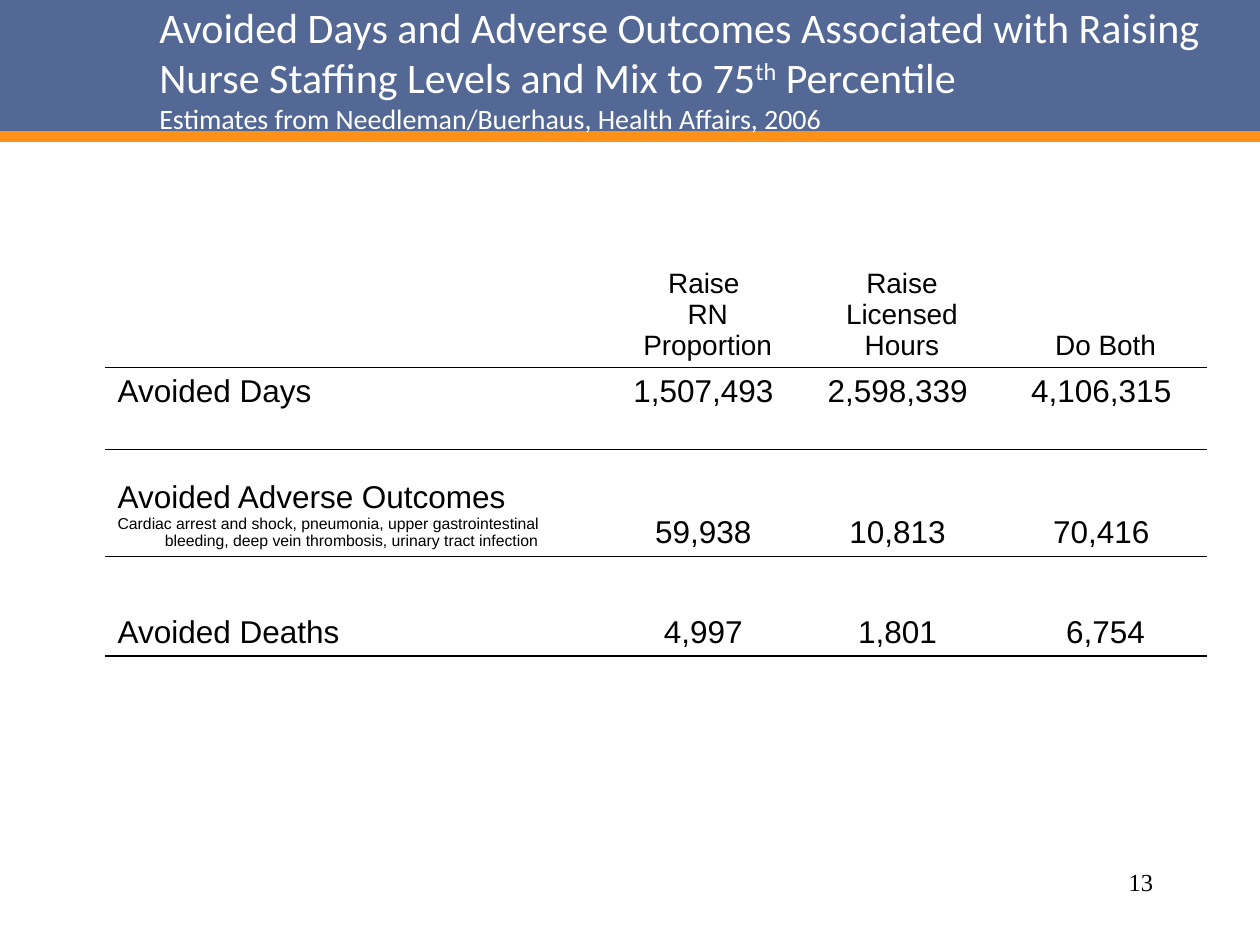
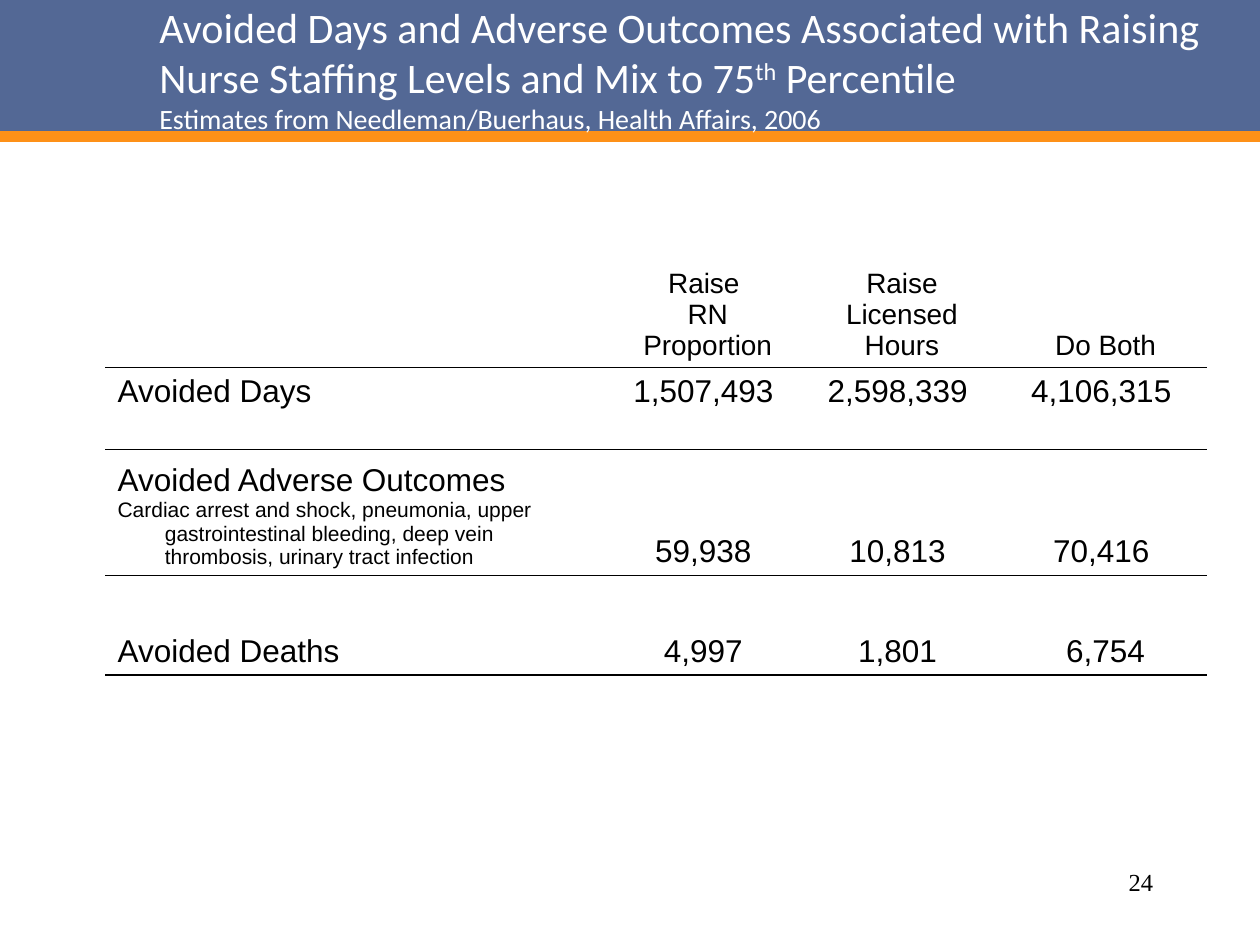
"""Build two slides on days and outcomes avoided by higher nurse staffing."""
from dataclasses import dataclass

from lxml import etree
from pptx import Presentation
from pptx import util as u
from pptx.dml.color import RGBColor
from pptx.enum import shapes, text
from pptx.oxml.ns import qn

COLOURS = {"band": "536895", "rule": "FE9118", "title": "FFFFFF", "ink": "000000"}
GRID = u.Inches(1) / 12
COLUMNS, ROWS = 120, 90
BAND_ROWS = 13
TABLE_COLUMNS = (48.6, 17.6, 19.4, 19.4)
NO_GRID_STYLE = "{2D5ABB26-0587-4C30-8999-92F81FD0307C}"
HANGING = 4.5
LEFT, CENTRE, RIGHT = text.PP_ALIGN.LEFT, text.PP_ALIGN.CENTER, text.PP_ALIGN.RIGHT
TOP, MIDDLE, BOTTOM = text.MSO_ANCHOR.TOP, text.MSO_ANCHOR.MIDDLE, text.MSO_ANCHOR.BOTTOM

CONDITIONS = ("Cardiac arrest and shock, pneumonia, upper gastrointestinal bleeding, "
              "deep vein thrombosis, urinary tract infection")


@dataclass(frozen=True)
class Line:
    words: str
    size: int = 18


@dataclass(frozen=True)
class TableRow:
    height: float
    label: tuple[Line, ...]
    values: tuple[tuple[Line, ...], ...]
    anchor: text.MSO_ANCHOR = BOTTOM


@dataclass(frozen=True)
class StaffingSlide:
    number: str
    conditions_size: int


SLIDES = (StaffingSlide("13", 9), StaffingSlide("24", 12))


def grid(*units: float) -> list[int]:
    return [u.Emu(round(unit * GRID)) for unit in units]


def lines(*words: str, size: int = 18) -> tuple[Line, ...]:
    return tuple(Line(part, size) for part in words)


def values(*figures: str) -> tuple[tuple[Line, ...], ...]:
    return tuple(lines(figure) for figure in figures)


def table_rows(conditions_size: int) -> tuple[TableRow, ...]:
    headings = (("Raise ", "RN", "Proportion"), ("Raise", "Licensed", "Hours"), ("Do Both",))
    return (
        TableRow(15, (), tuple(lines(*heading, size=16) for heading in headings)),
        TableRow(7.8, lines("Avoided Days"),
                 values("1,507,493 ", "2,598,339 ", "4,106,315 "), TOP),
        TableRow(10.2, (Line("Avoided Adverse Outcomes"), Line(CONDITIONS, conditions_size)),
                 values("59,938 ", "10,813 ", "70,416 ")),
        TableRow(9.5, lines("Avoided Deaths"), values("4,997 ", "1,801 ", " 6,754 ")),
    )


def write(para, words: str, *, size: int, face: str = "Arial", colour: str = "ink",
          align=LEFT, raised: bool = False) -> None:
    para.alignment = align
    span = para.add_run()
    span.text = words
    span.font.size = u.Pt(size)
    span.font.name = face
    span.font.color.rgb = RGBColor.from_string(COLOURS[colour])
    if raised:
        span.font._element.set("baseline", "30000")


def add_text_box(page, area: tuple[float, ...], anchor=TOP):
    frame = page.shapes.add_textbox(*grid(*area)).text_frame
    frame.word_wrap = True
    frame.vertical_anchor = anchor
    return frame.paragraphs[0]


def draw_band(page) -> None:
    band = page.shapes.add_shape(shapes.MSO_SHAPE.RECTANGLE, *grid(0, 0, COLUMNS, BAND_ROWS))
    band.shadow.inherit = False
    band.fill.solid()
    band.fill.fore_color.rgb = RGBColor.from_string(COLOURS["band"])
    band.line.fill.background()
    rule = page.shapes.add_connector(
        shapes.MSO_CONNECTOR.STRAIGHT, *grid(0, BAND_ROWS, COLUMNS, BAND_ROWS))
    rule.line.width = u.Pt(6)
    rule.line.color.rgb = RGBColor.from_string(COLOURS["rule"])
    etree.SubElement(rule._element.spPr, qn("a:effectLst"))


def draw_title(page) -> None:
    para = add_text_box(page, (14, 0, 103, BAND_ROWS), MIDDLE)
    style = {"face": "Calibri", "colour": "title"}
    write(para, "Avoided Days and Adverse Outcomes Associated with Raising "
                "Nurse Staffing Levels and Mix to 75", size=24, **style)
    write(para, "th", size=24, raised=True, **style)
    write(para, " Percentile", size=24, **style)
    para.add_line_break()
    write(para, "Estimates from Needleman/Buerhaus, Health Affairs, 2006", size=16, **style)


def underline(cell) -> None:
    edge = etree.Element(qn("a:lnB"), w=str(u.Pt(1)))
    fill = etree.SubElement(edge, qn("a:solidFill"))
    etree.SubElement(fill, qn("a:srgbClr"), val=COLOURS["ink"])
    cell._tc.get_or_add_tcPr().insert(0, edge)


def fill_cell(cell, content: tuple[Line, ...], align, anchor) -> None:
    cell.fill.background()
    cell.vertical_anchor = anchor
    underline(cell)
    indent = grid(HANGING)[0]
    for index, line in enumerate(content):
        para = cell.text_frame.add_paragraph() if index else cell.text_frame.paragraphs[0]
        properties = para._p.get_or_add_pPr()
        properties.set("marL", str(indent))
        properties.set("indent", str(-indent))
        write(para, line.words, size=line.size, align=align)


def draw_table(page, rows: tuple[TableRow, ...]) -> None:
    height = sum(row.height for row in rows)
    area = grid(10, 20, sum(TABLE_COLUMNS), height)
    table = page.shapes.add_table(len(rows), len(TABLE_COLUMNS), *area).table
    table.first_row = table.horz_banding = False
    table._tbl.tblPr.find(qn("a:tableStyleId")).text = NO_GRID_STYLE
    for column, width in zip(table.columns, grid(*TABLE_COLUMNS)):
        column.width = width
    for index, row in enumerate(rows):
        table.rows[index].height = grid(row.height)[0]
        for position, content in enumerate((row.label, *row.values)):
            align = CENTRE if position else LEFT
            fill_cell(table.cell(index, position), content, align, row.anchor)


def draw_number(page, number: str) -> None:
    para = add_text_box(page, (86, 82, 25, 6))
    write(para, number, size=14, face="Times New Roman", align=RIGHT)


def main() -> None:
    deck = Presentation()
    deck.slide_width, deck.slide_height = grid(COLUMNS, ROWS)
    for staffing in SLIDES:
        page = deck.slides.add_slide(deck.slide_layouts[6])
        draw_band(page)
        draw_number(page, staffing.number)
        draw_title(page)
        draw_table(page, table_rows(staffing.conditions_size))
    deck.save("out.pptx")


if __name__ == "__main__":
    main()
